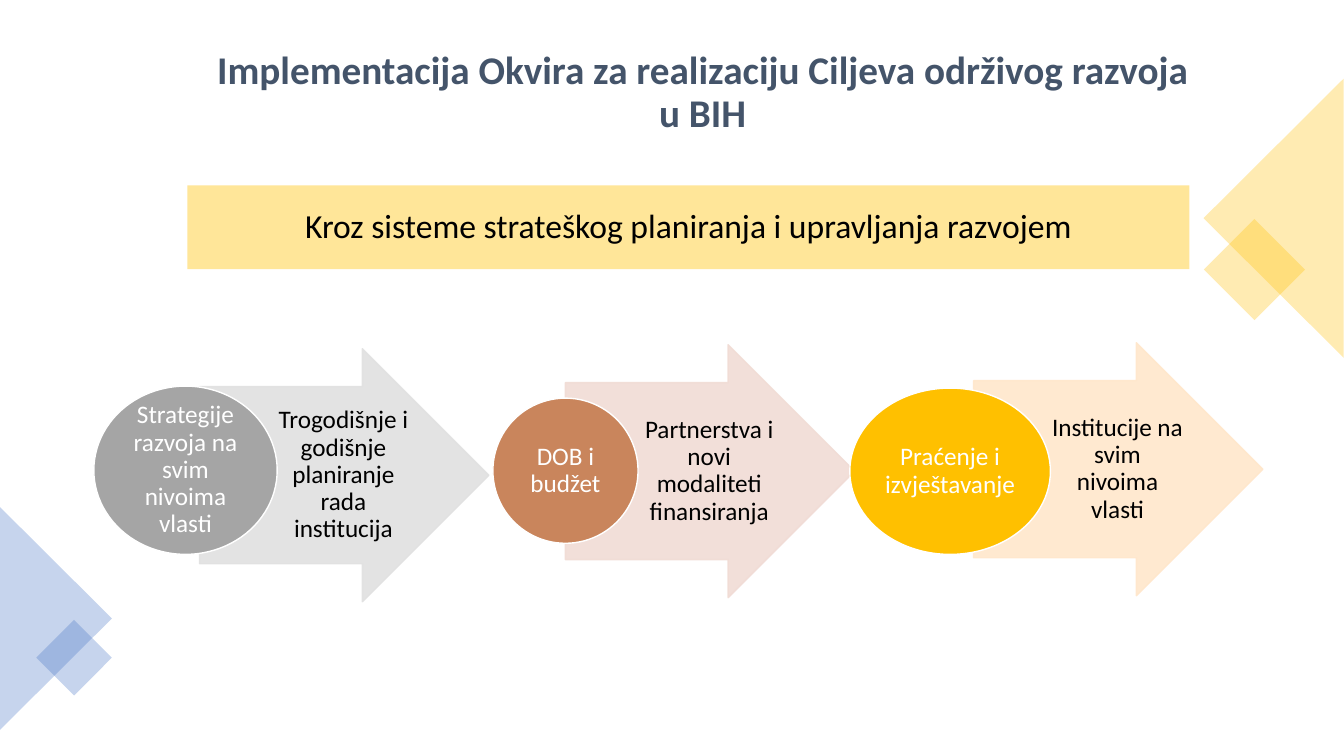
from dataclasses import dataclass
from lxml import etree
from pptx import Presentation
from pptx.dml.color import RGBColor
from pptx.enum.shapes import MSO_SHAPE as Kind
from pptx.enum.text import MSO_ANCHOR as Anchor, PP_ALIGN as Align
from pptx.oxml.ns import qn
from pptx.shapes.autoshape import Shape
from pptx.slide import Slide
from pptx.util import Pt

WHITE = RGBColor(0xFF, 0xFF, 0xFF)
BLACK = RGBColor(0, 0, 0)
SLATE = RGBColor(0x44, 0x54, 0x6A)
GOLD = RGBColor(0xFF, 0xC0, 0x00)
BLUE = RGBColor(0x44, 0x72, 0xC4)
CREAM = RGBColor(0xFF, 0xE6, 0x99)
GRAY = RGBColor(0xA5, 0xA5, 0xA5)
SILVER = RGBColor(0xE1, 0xE1, 0xE1)
BROWN = RGBColor(0xC9, 0x85, 0x5C)
BLUSH = RGBColor(0xF1, 0xDC, 0xD5)
PEACH = RGBColor(0xFF, 0xE7, 0xCB)

FONT = "Calibri"
WIDE, HIGH = 206.6, 180.7
NO_PAD = (0.7, 0.7, 0.7, 0.7)
ARROW_PAD = (3.6, 0.7, 2.2, 0.7)
BOX_PAD = (7.2, 3.6, 7.2, 3.6)


@dataclass
class Box:
    left: float
    top: float
    width: float
    height: float

    def size(self) -> tuple[Pt, Pt, Pt, Pt]:
        return Pt(self.left), Pt(self.top), Pt(self.width), Pt(self.height)


@dataclass
class Decor:
    kind: Kind
    box: Box
    turn: int
    color: RGBColor


@dataclass
class Step:
    left: float
    top: float
    label: str
    tint: RGBColor
    oval: Box
    title: str
    color: RGBColor


DECOR = [
    Decor(Kind.RECTANGLE, Box(870.5, 167, 51.1, 51.1), 45, GOLD),
    Decor(Kind.ISOSCELES_TRIANGLE, Box(810, 105.8, 199.4, 100.1), 270, GOLD),
    Decor(Kind.ISOSCELES_TRIANGLE, Box(-39.6, 401.8, 159.1, 79.9), 90, BLUE),
    Decor(Kind.RECTANGLE, Box(33.8, 450.7, 38.2, 38.2), 45, BLUE),
]

STEPS = [
    Step(142.6, 249.1, "Trogodišnje i godišnje planiranje rada institucija", SILVER,
         Box(67, 275.8, 131, 120.2), "Strategije razvoja na svim nivoima vlasti", GRAY),
    Step(403.9, 246.2, "Partnerstva i novi modaliteti finansiranja", BLUSH,
         Box(352.1, 284.4, 103.7, 103.7), "DOB i budžet", BROWN),
    Step(695.5, 244.8, "Institucije na svim nivoima vlasti", PEACH,
         Box(607, 277.2, 143.3, 118.8), "Praćenje i izvještavanje", GOLD),
]


def fade(shape: Shape, share: int) -> None:
    for node in shape.fill._xPr.iter(qn("a:srgbClr")):
        etree.SubElement(node, qn("a:alpha")).set("val", str(share * 1000))


def draw(slide: Slide, kind: Kind, box: Box, color: RGBColor,
         edge: RGBColor | None = None) -> Shape:
    shape = slide.shapes.add_shape(kind, *box.size())
    shape.shadow.inherit = False
    shape.fill.solid()
    shape.fill.fore_color.rgb = color
    if edge is None:
        shape.line.fill.background()
    else:
        shape.line.color.rgb = edge
        shape.line.width = Pt(1)
    return shape


def write(shape: Shape, text: str, size: int, color: RGBColor,
          pad: tuple[float, float, float, float] = BOX_PAD, bold: bool = False) -> None:
    frame = shape.text_frame
    frame.word_wrap = True
    frame.vertical_anchor = Anchor.MIDDLE
    frame.margin_left, frame.margin_top, frame.margin_right, frame.margin_bottom = map(Pt, pad)
    frame.text = text
    line = frame.paragraphs[0]
    line.alignment = Align.CENTER
    line.line_spacing = 0.9
    font = line.runs[0].font
    font.name = FONT
    font.size = Pt(size)
    font.bold = bold
    font.color.rgb = color


def add_decor(slide: Slide, decor: Decor) -> None:
    shape = draw(slide, decor.kind, decor.box, decor.color)
    shape.rotation = decor.turn
    fade(shape, 30)


def add_step(slide: Slide, step: Step) -> None:
    arrow = draw(slide, Kind.RIGHT_ARROW, Box(step.left, step.top, WIDE, HIGH),
                 step.tint, step.tint)
    arrow.adjustments[0] = 0.7
    arrow.adjustments[1] = 0.5
    fade(arrow, 90)
    area = Box(step.left + WIDE / 4, step.top + HIGH * 0.15, 100.8, HIGH * 0.7)
    write(slide.shapes.add_textbox(*area.size()), step.label, 18, BLACK, ARROW_PAD)
    oval = draw(slide, Kind.OVAL, step.oval, step.color, WHITE)
    write(oval, step.title, 18, WHITE, NO_PAD)


def main() -> None:
    deck = Presentation()
    deck.slide_width, deck.slide_height = Pt(960), Pt(540)
    slide = deck.slides.add_slide(deck.slide_layouts[6])
    title = slide.shapes.add_textbox(*Box(144, 36.7, 715.7, 59.8).size())
    write(title, "Implementacija Okvira za realizaciju Ciljeva održivog razvoja u BIH",
          28, SLATE, bold=True)
    for decor in DECOR:
        add_decor(slide, decor)
    for step in STEPS:
        add_step(slide, step)
    banner = draw(slide, Kind.RECTANGLE, Box(133.9, 132.5, 715.7, 59.8), CREAM)
    write(banner, "Kroz sisteme strateškog planiranja i upravljanja razvojem", 24, BLACK)
    deck.save("out.pptx")


if __name__ == "__main__":
    main()
